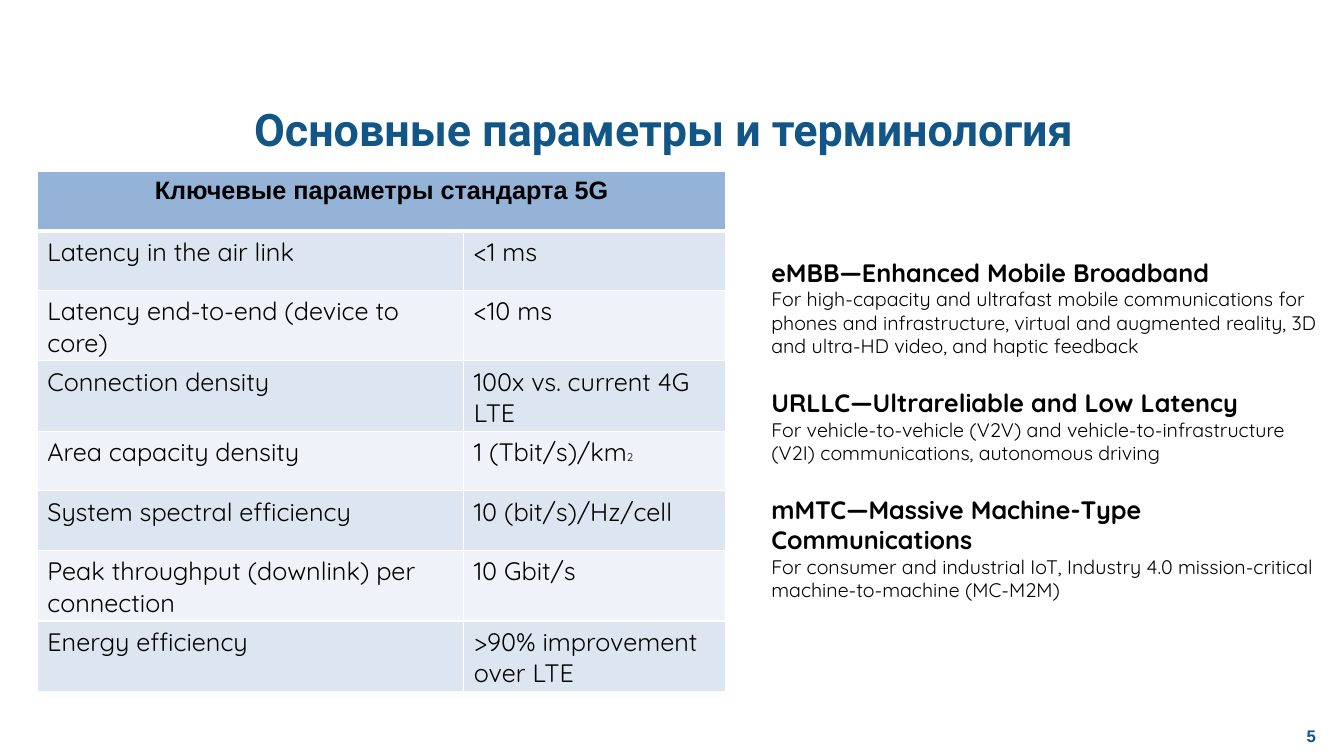
"""Build the slide on the main 5G parameters and terminology."""
import pptx
import pptx.dml.color
import pptx.enum.text
import pptx.oxml
import pptx.oxml.ns
import pptx.util

Inches = pptx.util.Inches
PP_ALIGN = pptx.enum.text.PP_ALIGN
ANCHOR = pptx.enum.text.MSO_ANCHOR
AUTO_SIZE = pptx.enum.text.MSO_AUTO_SIZE

THEME = {
    "blue": "125687", "black": "000000", "border": "FFFFFF",
    "header": "95B3D7", "bands": ("DDE5F0", "EFF2F8"),
    "title": {"name": "Roboto", "size": 32, "bold": True},
    "header_font": {"name": "Arial", "size": 18, "bold": True},
    "cell": {"name": "Quicksand", "size": 18, "bold": False},
    "small": {"name": "Quicksand", "size": 8, "bold": False},
    "term": {"name": "Quicksand", "size": 18, "bold": True},
    "detail": {"name": "Quicksand", "size": 14, "bold": False},
    "number": {"name": "Arial", "size": 12, "bold": True},
}


def add_run(p, text, style, color="black"):
    r = p.add_run()
    r.text = text
    for name, value in THEME[style].items():
        setattr(r.font, name, pptx.util.Pt(value) if name == "size" else value)
    r.font.color.rgb = pptx.dml.color.RGBColor.from_string(THEME[color])


def format_cell(cell, fill, bottom=1):
    tcPr = cell._tc.get_or_add_tcPr()
    for side, width in (("L", 1), ("R", 1), ("T", 1), ("B", bottom)):
        tcPr.append(pptx.oxml.parse_xml(
            f'<a:ln{side} {pptx.oxml.ns.nsdecls("a")} w="{pptx.util.Pt(width)}">'
            f'<a:solidFill><a:srgbClr val="{THEME["border"]}"/></a:solidFill></a:ln{side}>'))
    cell.fill.solid()
    cell.fill.fore_color.rgb = pptx.dml.color.RGBColor.from_string(fill)


prs = pptx.Presentation()
prs.slide_width, prs.slide_height = Inches(13.33), Inches(7.5)
s = prs.slides.add_slide(prs.slide_layouts[1])

title, body = s.placeholders
number = s.shapes.add_textbox(0, 0, 0, 0)
boxes = (
    (title, (0.92, 0.92, 11.33, 0.71), ANCHOR.MIDDLE, AUTO_SIZE.NONE),
    (body, (7.55, 2.5, 5.75, 3.58), ANCHOR.TOP, AUTO_SIZE.SHAPE_TO_FIT_TEXT),
    (number, (12.67, 7.09, 0.67, 0.42), ANCHOR.MIDDLE, AUTO_SIZE.NONE),
)
for sp, place, anchor, auto_size in boxes:
    for name, value in zip(("left", "top", "width", "height"), place):
        setattr(sp, name, Inches(value))
    frame = {"word_wrap": True, "vertical_anchor": anchor, "auto_size": auto_size}
    for name, value in frame.items():
        setattr(sp.text_frame, name, value)

for sp, text, style in (
    (title, "Основные параметры и терминология", "title"),
    (number, "5", "number"),
):
    p = sp.text_frame.paragraphs[0]
    p.alignment = PP_ALIGN.CENTER
    add_run(p, text, style, "blue")

parameters = (
    ("Latency in the air link", "<1 ms"),
    ("Latency end-to-end (device to core)", "<10 ms"),
    ("Connection density", "100x vs. current 4G LTE"),
    ("Area capacity density", "1 (Tbit/s)/km"),
    ("System spectral efficiency", "10 (bit/s)/Hz/cell"),
    ("Peak throughput (downlink) per connection", "10 Gbit/s"),
    ("Energy efficiency", ">90% improvement over LTE"),
)
row_count = len(parameters) + 1
table = s.shapes.add_table(row_count, 2, Inches(0.37), Inches(1.7),
                           Inches(6.83), Inches(0.59 * row_count)).table
for column, width in zip(table.columns, (4.23, 2.6)):
    column.width = Inches(width)
for row in table.rows:
    row.height = Inches(0.59)

header = table.cell(0, 0)
header.merge(table.cell(0, 1))
for column in range(2):
    format_cell(table.cell(0, column), THEME["header"], bottom=3)
p = header.text_frame.paragraphs[0]
p.alignment = PP_ALIGN.CENTER
add_run(p, "Ключевые параметры стандарта 5G", "header_font")

for i, row in enumerate(parameters):
    for j, text in enumerate(row):
        cell = table.cell(i + 1, j)
        format_cell(cell, THEME["bands"][i % 2])
        p = cell.text_frame.paragraphs[0]
        add_run(p, text, "cell")
        if text.endswith("/km"):
            add_run(p, "2", "small")

terms = (
    ("eMBB—Enhanced Mobile Broadband",
     "For high-capacity and ultrafast mobile communications for phones and infrastructure, "
     "virtual and augmented reality, 3D and ultra-HD video, and haptic feedback"),
    ("URLLC—Ultrareliable and Low Latency",
     "For vehicle-to-vehicle (V2V) and vehicle-to-infrastructure (V2I) communications, "
     "autonomous driving"),
    ("mMTC—Massive Machine-Type Communications",
     "For consumer and industrial IoT, Industry 4.0 mission-critical "
     "machine-to-machine (MC-M2M)"),
)
tf = body.text_frame
for i, term in enumerate(terms):
    for style, text in zip(("term", "detail"), term):
        first = i == 0 and style == "term"
        p = tf.paragraphs[0] if first else tf.add_paragraph()
        pPr = p._p.get_or_add_pPr()
        pPr.set("marL", "0")
        pPr.set("indent", "0")
        pPr.append(pptx.oxml.parse_xml(f'<a:buNone {pptx.oxml.ns.nsdecls("a")}/>'))
        p.space_before = pptx.util.Pt(21 if style == "term" and not first else 0)
        add_run(p, text, style)

prs.save("out.pptx")
